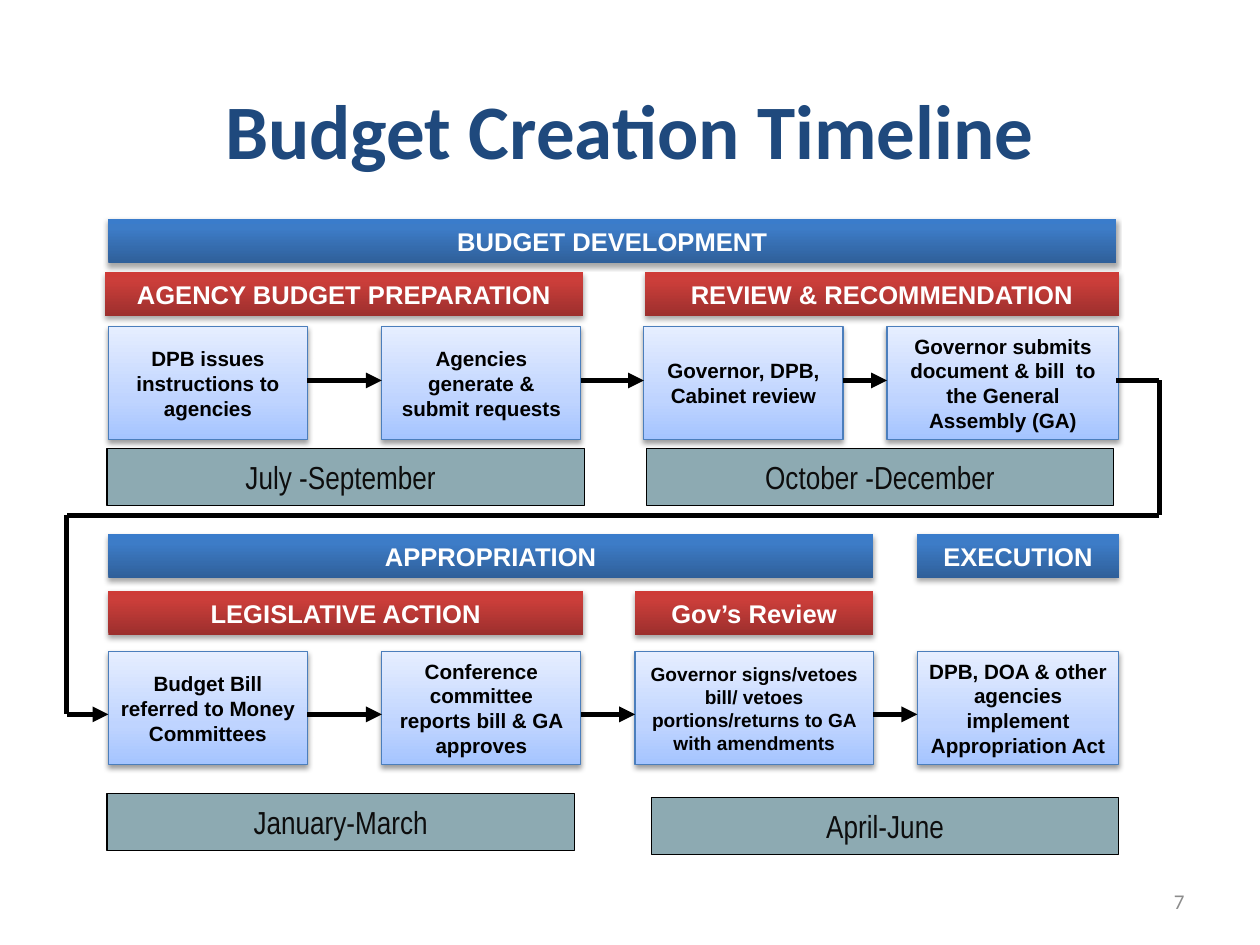
from itertools import pairwise

from pptx import Presentation
from pptx.dml.color import RGBColor
from pptx.enum.shapes import MSO_CONNECTOR, MSO_SHAPE
from pptx.enum.text import MSO_ANCHOR, PP_ALIGN
from pptx.oxml import parse_xml
from pptx.oxml.ns import nsdecls, qn
from pptx.util import Inches, Pt

BLACK = RGBColor(0x00, 0x00, 0x00)
WHITE = RGBColor(0xFF, 0xFF, 0xFF)
NAVY = RGBColor(0x1F, 0x49, 0x7D)
GREY = RGBColor(0x8C, 0x8C, 0x8C)
NEAR_BLACK = RGBColor(0x0D, 0x0D, 0x0D)
TEAL = RGBColor(0x21, 0x59, 0x68)
STEP_LINE = RGBColor(0x4B, 0x7E, 0xBC)

# Gradient stops: (percent, colour), running from bottom to top
BLUE_STOPS = [(0, RGBColor(0x2F, 0x5F, 0x99)), (80, RGBColor(0x3D, 0x7C, 0xC7)),
              (100, RGBColor(0x3A, 0x7C, 0xCB))]
RED_STOPS = [(0, RGBColor(0x9C, 0x2F, 0x2D)), (80, RGBColor(0xCB, 0x3E, 0x3A)),
             (100, RGBColor(0xCE, 0x3B, 0x37))]
STEP_STOPS = [(0, RGBColor(0xA4, 0xC4, 0xFF)), (35, RGBColor(0xBF, 0xD4, 0xFF)),
              (100, RGBColor(0xE6, 0xEE, 0xFF))]

# Headings: (text, left, top, width, stops)
HEADINGS = [
    ("BUDGET DEVELOPMENT", 0.86, 1.74, 8, BLUE_STOPS),
    ("AGENCY BUDGET PREPARATION", 0.83, 2.16, 3.8, RED_STOPS),
    ("REVIEW & RECOMMENDATION", 5.12, 2.16, 3.76, RED_STOPS),
    ("APPROPRIATION", 0.86, 4.24, 6.07, BLUE_STOPS),
    ("EXECUTION", 7.28, 4.24, 1.6, BLUE_STOPS),
    ("LEGISLATIVE ACTION", 0.86, 4.69, 3.77, RED_STOPS),
    ("Gov’s Review", 5.04, 4.69, 1.89, RED_STOPS),
]
HEADING_HEIGHT = 0.35

# Rows of steps: (top, arrow height, [(text, left, width, text size)])
STEP_ROWS = [
    (2.59, 3.02, [
        ("DPB issues instructions to agencies", 0.86, 1.58, 11.8),
        ("Agencies generate & submit requests", 3.03, 1.58, 11.8),
        ("Governor, DPB, Cabinet review", 5.11, 1.58, 11.8),
        ("Governor submits document & bill  to\vthe General Assembly (GA)",
         7.04, 1.84, 11.8),
    ]),
    (5.17, 5.67, [
        ("Budget Bill referred to Money Committees", 0.86, 1.58, 11.8),
        ("Conference committee reports bill & GA approves", 3.03, 1.58, 11.8),
        ("Governor signs/vetoes bill/ vetoes portions/returns to GA with amendments",
         5.04, 1.89, 10.9),
        ("DPB, DOA & other agencies implement Appropriation Act", 7.28, 1.6, 11.8),
    ]),
]
STEP_HEIGHT = 0.9

# Periods: (text, left, top, width, right margin)
PERIODS = [
    ("July -September", 0.85, 3.56, 3.79, 0.18),
    ("October -December", 5.13, 3.56, 3.71, 0.1),
    ("January-March", 0.85, 6.3, 3.71, 0.1),
    ("April-June", 5.17, 6.33, 3.71, 0.1),
]
PERIOD_HEIGHT = 0.45

# Path from the end of the first row to the start of the second
RETURN_PATH = [(8.86, 3.02), (9.2, 3.02), (9.2, 4.09), (0.53, 4.09), (0.53, 5.67), (0.86, 5.67)]


def write(shape, text, size, font, color, bold=False, align=PP_ALIGN.CENTER):
    frame = shape.text_frame
    frame.word_wrap = True
    frame.vertical_anchor = MSO_ANCHOR.MIDDLE
    frame.text = text
    paragraph = frame.paragraphs[0]
    paragraph.alignment = align
    for run in paragraph.runs:
        run.font.size, run.font.name, run.font.bold = Pt(size), font, bold
        run.font.color.rgb = color


def add_text(slide, left, top, width, height, *style, **options):
    box = slide.shapes.add_textbox(Inches(left), Inches(top), Inches(width), Inches(height))
    write(box, *style, **options)


def add_box(slide, left, top, width, height, line_color=None):
    shape = slide.shapes.add_shape(MSO_SHAPE.RECTANGLE, Inches(left), Inches(top),
                                   Inches(width), Inches(height))
    shape.shadow.inherit = False
    if line_color is None:
        shape.line.fill.background()
    else:
        shape.line.color.rgb = line_color
        shape.line.width = Pt(0.75)
    return shape


def add_gradient_and_shadow(shape, stops, opacity):
    shape.fill.gradient()
    shape.fill.gradient_angle = 90
    properties = shape._element.spPr
    stop_list = properties.find(".//" + qn("a:gsLst"))
    stop_list.clear()
    for percent, color in stops:
        stop_list.append(parse_xml(
            f'<a:gs {nsdecls("a")} pos="{percent * 1000}"><a:srgbClr val="{color}"/></a:gs>'))
    properties.find(qn("a:effectLst")).append(parse_xml(
        f'<a:outerShdw {nsdecls("a")} blurRad="{Pt(3.1)}" dist="{Pt(1.7)}" dir="5400000" '
        f'rotWithShape="0"><a:srgbClr val="000000"><a:alpha val="{opacity * 1000}"/>'
        '</a:srgbClr></a:outerShdw>'))


def add_line(slide, start, end, arrow=False):
    line = slide.shapes.add_connector(MSO_CONNECTOR.STRAIGHT,
                                      *(Inches(value) for value in (*start, *end)))
    line.line.color.rgb = BLACK
    line.line.width = Pt(3)
    if arrow:
        line.line._get_or_add_ln().append(
            parse_xml(f'<a:tailEnd {nsdecls("a")} type="triangle"/>'))
    line._element.spPr.append(parse_xml(f'<a:effectLst {nsdecls("a")}/>'))


def main():
    presentation = Presentation()
    presentation.slide_width, presentation.slide_height = Inches(10), Inches(7.5)
    slide = presentation.slides.add_slide(presentation.slide_layouts[6])

    # Title and page number
    add_text(slide, 0.75, 0.57, 8.5, 0.91, "Budget Creation Timeline", 44, "Calibri", NAVY,
             bold=True)
    add_text(slide, 7.17, 6.95, 2.33, 0.4, "7", 12, "Calibri", GREY, align=PP_ALIGN.RIGHT)

    # Phase headings
    for text, left, top, width, stops in HEADINGS:
        heading = add_box(slide, left, top, width, HEADING_HEIGHT)
        add_gradient_and_shadow(heading, stops, 35)
        write(heading, text, 14.6, "Arial", WHITE, bold=True)

    # Steps, with an arrow from each to the next
    for top, arrow_y, steps in STEP_ROWS:
        for text, left, width, size in steps:
            step = add_box(slide, left, top, width, STEP_HEIGHT, STEP_LINE)
            add_gradient_and_shadow(step, STEP_STOPS, 38)
            write(step, text, size, "Arial", BLACK, bold=True)
            step.text_frame.margin_left = step.text_frame.margin_right = Inches(0.08)
        for (_, left, width, _), (_, next_left, _, _) in pairwise(steps):
            add_line(slide, (left + width, arrow_y), (next_left, arrow_y), arrow=True)

    # Return path to the second row
    for start, end in pairwise(RETURN_PATH):
        add_line(slide, start, end, arrow=end == RETURN_PATH[-1])

    # Periods
    for text, left, top, width, right_margin in PERIODS:
        period = add_box(slide, left, top, width, PERIOD_HEIGHT, BLACK)
        period.fill.solid()
        period.fill.fore_color.rgb = TEAL
        period._element.spPr.find(qn("a:solidFill"))[0].append(
            parse_xml(f'<a:alpha {nsdecls("a")} val="51000"/>'))
        write(period, text, 18.2, "Arial Narrow", NEAR_BLACK)
        period.text_frame.margin_right = Inches(right_margin)

    presentation.save("out.pptx")


if __name__ == "__main__":
    main()
